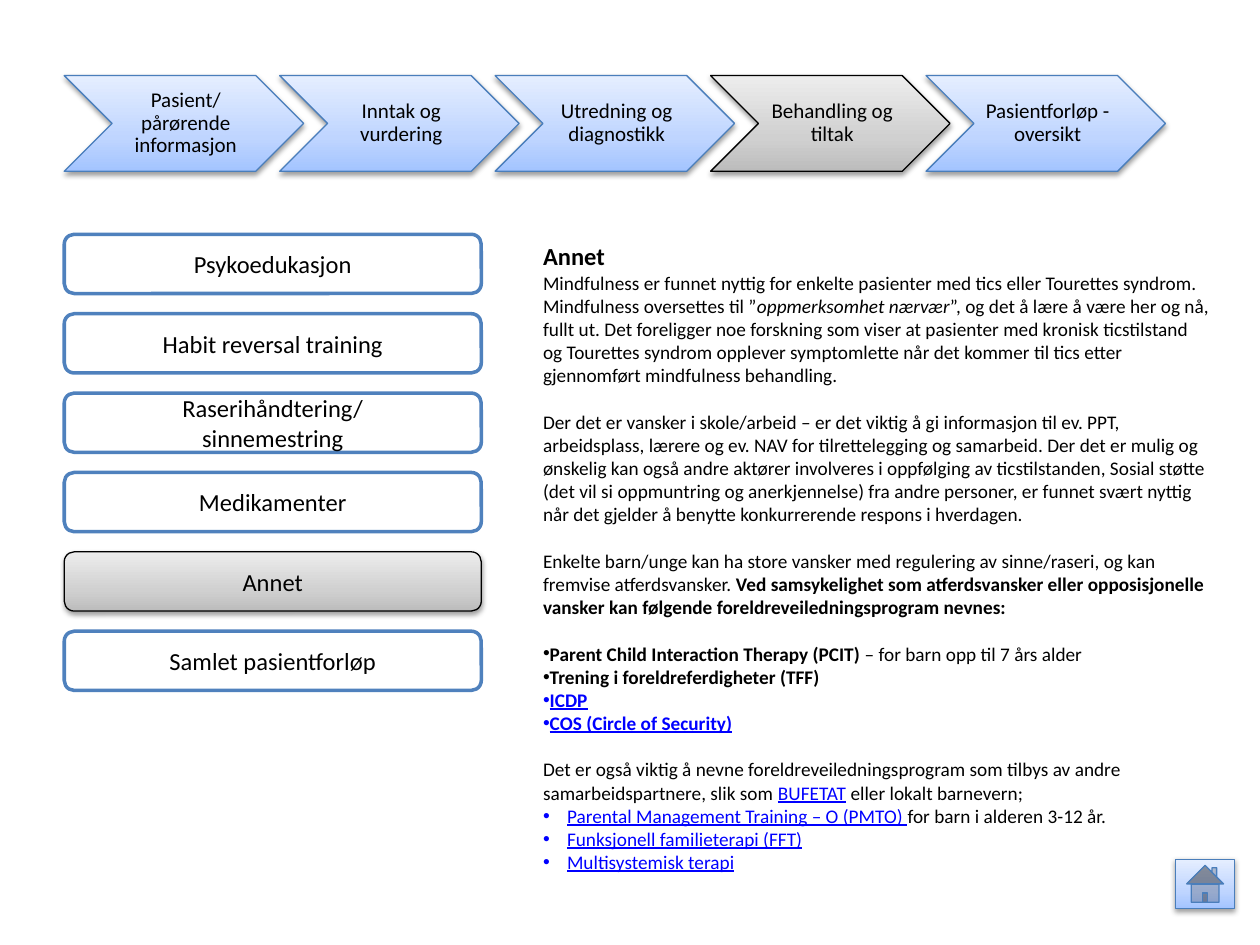
"""Build the treatment slide with a step row, a topic menu and body text."""
from lxml import etree
from pptx import Presentation, util as u
from pptx.dml.color import RGBColor
from pptx.enum import shapes, text
from pptx.oxml.ns import qn

BLACK = RGBColor(0, 0, 0)
WHITE = RGBColor(255, 255, 255)
LINK = RGBColor(0, 0, 255)
EDGE = RGBColor(0x4A, 0x7E, 0xBB)
FRAME = RGBColor(0x4F, 0x81, 0xBD)
BLUES = [(0, "A3C4FF"), (35, "BFD5FF"), (100, "E5EEFF")]
GREYS = [(0, "BCBCBC"), (35, "D0D0D0"), (100, "EDEDED")]
FONT = "Calibri"

STEPS = ["Pasient/ pårørende informasjon", "Inntak og vurdering",
         "Utredning og diagnostikk", "Behandling og tiltak",
         "Pasientforløp - oversikt"]
STEP = "Behandling og tiltak"
TOPICS = [["Psykoedukasjon"], ["Habit reversal training"],
          ["Raserihåndtering/", "sinnemestring"], ["Medikamenter"],
          ["Annet"], ["Samlet pasientforløp"]]
TOPIC = "Annet"

PLAIN, FLUSH, HANG = None, 0, 0.19
GAP = 13.4
BODY = [
    (PLAIN, 0, [
        ("Mindfulness er funnet nyttig for enkelte pasienter med tics eller "
         "Tourettes syndrom. Mindfulness oversettes til ”", ""),
        ("oppmerksomhet nærvær", "i"),
        ("”, og det å lære å være her og nå, fullt ut. Det foreligger noe "
         "forskning som viser at pasienter med kronisk ticstilstand og "
         "Tourettes syndrom opplever symptomlette når det kommer til tics "
         "etter gjennomført mindfulness behandling.", "")]),
    (PLAIN, GAP, [
        ("Der det er vansker i skole/arbeid – er det viktig å gi informasjon "
         "til ev. PPT, arbeidsplass, lærere og ev. NAV for tilrettelegging "
         "og samarbeid. Der det er mulig og ønskelig kan også andre aktører "
         "involveres i oppfølging av ticstilstanden, Sosial støtte (det vil "
         "si oppmuntring og anerkjennelse) fra andre personer, er funnet "
         "svært nyttig når det gjelder å benytte konkurrerende respons i "
         "hverdagen.", "")]),
    (PLAIN, GAP, [
        ("Enkelte barn/unge kan ha store vansker med regulering av "
         "sinne/raseri, og kan fremvise atferdsvansker. ", ""),
        ("Ved samsykelighet som atferdsvansker eller opposisjonelle vansker "
         "kan følgende foreldreveiledningsprogram nevnes:", "b")]),
    (FLUSH, GAP, [("Parent Child Interaction Therapy (PCIT) ", "b"),
                  ("– for barn opp til 7 års alder", "")]),
    (FLUSH, 0, [("Trening i foreldreferdigheter (TFF)", "b")]),
    (FLUSH, 0, [("ICDP", "bu")]),
    (FLUSH, 0, [("COS (Circle of Security)", "bu")]),
    (PLAIN, GAP, [
        ("Det er også viktig å nevne foreldreveiledningsprogram som tilbys "
         "av andre samarbeidspartnere, slik som ", ""),
        ("BUFETAT", "u"), (" eller lokalt barnevern;", "")]),
    (HANG, 0, [("Parental Management Training – O (PMTO) ", "u"),
               ("for barn i alderen 3-12 år.", "")]),
    (HANG, 0, [("Funksjonell familieterapi (FFT)", "u")]),
    (HANG, 0, [("Multisystemisk terapi", "u")]),
]


def plain(*lines, style=""):
    return [(PLAIN, 0, [(line, style)]) for line in lines]


def write(shape, paras, size=11, align=text.PP_ALIGN.CENTER, space=1.0,
          anchor=text.MSO_ANCHOR.MIDDLE, pads=(0.1, 0.05, 0.1, 0.05)):
    frame = shape.text_frame
    frame.word_wrap = True
    frame.auto_size = text.MSO_AUTO_SIZE.NONE
    frame.vertical_anchor = anchor
    for side, pad in zip(("left", "top", "right", "bottom"), pads):
        setattr(frame, "margin_" + side, u.Inches(pad))
    for n, (mark, gap, runs) in enumerate(paras):
        para = frame.add_paragraph() if n else frame.paragraphs[0]
        props = para._p.get_or_add_pPr()
        dent = u.Inches(mark or 0)
        props.set("marL", str(dent))
        props.set("indent", str(-dent))
        if mark is PLAIN:
            etree.SubElement(props, qn("a:buNone"))
        else:
            etree.SubElement(props, qn("a:buChar")).set("char", "•")
        para.alignment = align
        para.line_spacing = space
        para.space_before = u.Pt(gap)
        para.space_after = u.Pt(0)
        for words, style in runs:
            run = para.add_run()
            run.text = words
            font = run.font
            font.name, font.size = FONT, u.Pt(size)
            font.bold, font.italic = "b" in style, "i" in style
            font.underline = "u" in style
            font.color.rgb = LINK if "u" in style else BLACK


def place(shape, *box):
    shape.left, shape.top, shape.width, shape.height = map(u.Inches, box)


def draw(slide, kind, *box, edge=FRAME, width=2):
    shape = slide.shapes.add_shape(kind, *map(u.Inches, box))
    shape.shadow.inherit = False
    shape.fill.solid()
    shape.fill.fore_color.rgb = WHITE
    shape.line.color.rgb = edge
    shape.line.width = u.Pt(width)
    return shape


def gloss(slide, kind, *box, grey=False):
    shape = draw(slide, kind, *box, edge=BLACK if grey else EDGE, width=0.75)
    shape.fill.gradient()
    shape.fill.gradient_angle = 90
    props = shape._element.spPr
    stops = props.find(".//" + qn("a:gsLst"))
    stops.clear()
    for spot, tint in GREYS if grey else BLUES:
        stop = etree.SubElement(stops, qn("a:gs"), pos=str(spot * 1000))
        etree.SubElement(stop, qn("a:srgbClr"), val=tint)
    shade = etree.SubElement(props.find(qn("a:effectLst")),
                             qn("a:outerShdw"), blurRad="40000", dist="20000",
                             dir="5400000", rotWithShape="0")
    tone = etree.SubElement(shade, qn("a:srgbClr"), val="000000")
    etree.SubElement(tone, qn("a:alpha"), val="38000")
    return shape


def main():
    deck = Presentation()
    deck.slide_width, deck.slide_height = u.Inches(10), u.Inches(7.5)
    slide = deck.slides.add_slide(deck.slide_layouts[1])
    kinds = shapes.MSO_SHAPE
    left, top = text.PP_ALIGN.LEFT, text.MSO_ANCHOR.TOP

    title, body = slide.placeholders
    place(title, 4.21, 1.86, 5.51, 0.29)
    write(title, plain("Annet", style="b"), size=14, align=left, anchor=top,
          pads=(0.1, 0.05, 0.1, 0))
    place(body, 4.21, 2.1, 5.51, 5.08)
    write(body, BODY, align=left, anchor=top)

    for n, step in enumerate(STEPS):
        arrow = gloss(slide, kinds.CHEVRON, 0.51 + 1.71 * n, 0.6, 1.9, 0.76,
                      grey=step == STEP)
        write(arrow, plain(step), size=12, space=0.9,
              pads=(0.05, 0.02, 0.02, 0.02))

    for n, lines in enumerate(TOPICS):
        box = (kinds.ROUNDED_RECTANGLE, 0.51, 1.86 + 0.63 * n, 3.31, 0.47)
        if lines == [TOPIC]:
            tab = gloss(slide, *box, grey=True)
        else:
            tab = draw(slide, *box)
        write(tab, plain(*lines), size=14)

    gloss(slide, kinds.ACTION_BUTTON_HOME, 9.33, 6.82, 0.47, 0.39)
    deck.save("out.pptx")


if __name__ == "__main__":
    main()
